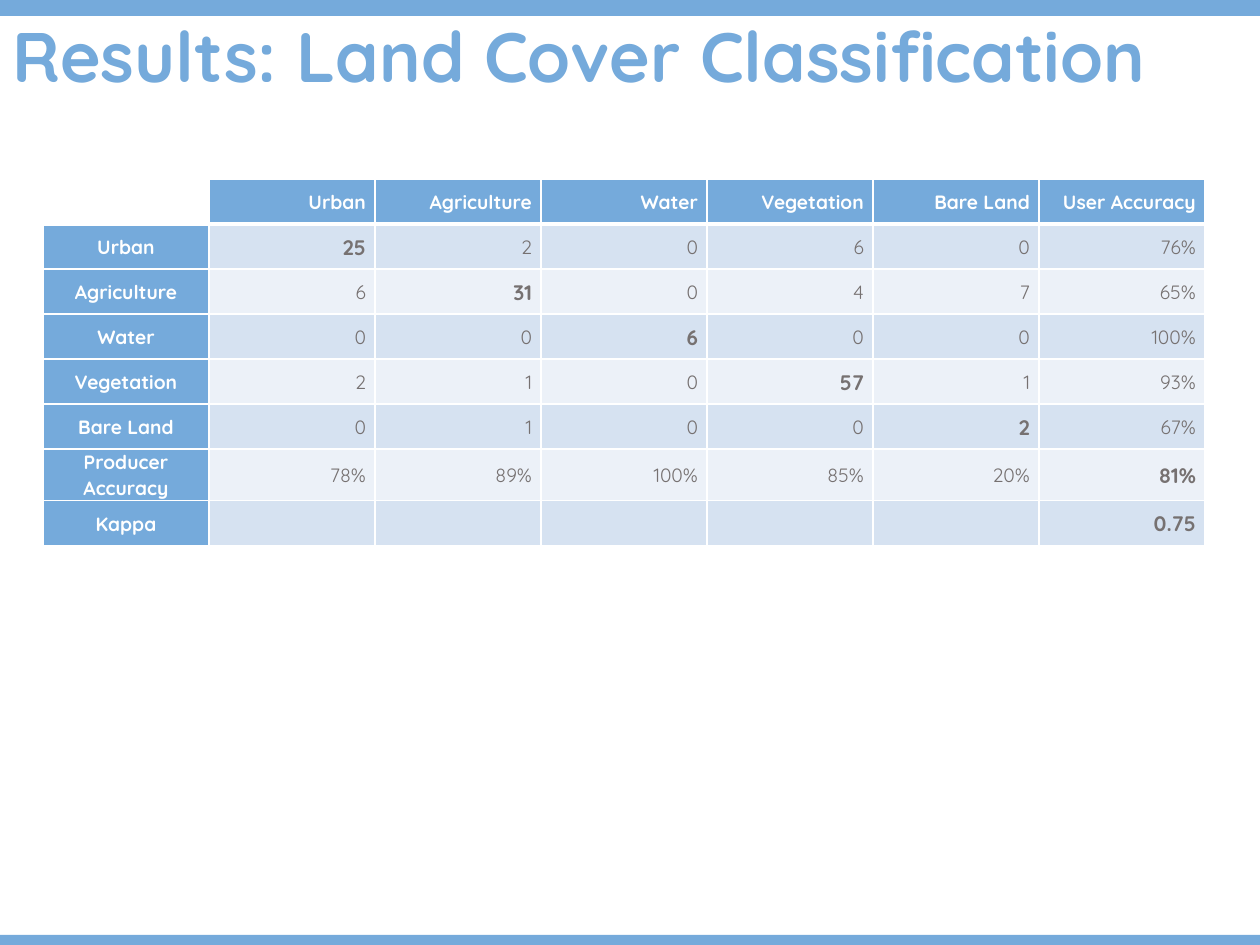
from lxml.etree import SubElement
from pptx import Presentation
from pptx.dml.color import RGBColor
from pptx.enum.shapes import MSO_SHAPE
from pptx.enum.text import MSO_ANCHOR, PP_ALIGN
from pptx.oxml.ns import qn
from pptx.util import Emu, Pt

PX_PER_INCH = 126
FONT = "Quicksand"
BLUE = RGBColor(0x75, 0xAA, 0xDB)
DARK_BAND = RGBColor(0xD6, 0xE2, 0xF1)
LIGHT_BAND = RGBColor(0xEC, 0xF1, 0xF8)
GREY = RGBColor(0x76, 0x71, 0x71)
WHITE = RGBColor(0xFF, 0xFF, 0xFF)

COLUMN_WIDTH, ROW_HEIGHT = 166, 45
ROWS = [
    ["", "Urban", "Agriculture", "Water", "Vegetation", "Bare Land", "User Accuracy"],
    ["Urban", "25", "2", "0", "6", "0", "76%"],
    ["Agriculture", "6", "31", "0", "4", "7", "65%"],
    ["Water", "0", "0", "6", "0", "0", "100%"],
    ["Vegetation", "2", "1", "0", "57", "1", "93%"],
    ["Bare Land", "0", "1", "0", "0", "2", "67%"],
    ["Producer Accuracy", "78%", "89%", "100%", "85%", "20%", "81%"],
    ["Kappa", "", "", "", "", "", "0.75"],
]
KAPPA_CELL = (7, 6)


def px(length):
    """Turn pixels into EMU."""
    return Emu(round(length * 914400 / PX_PER_INCH))


def set_font(para, size, color, bold):
    """Format the text of a paragraph."""
    font = para.font
    font.name, font.size, font.bold = FONT, Pt(size), bold
    font.color.rgb = color


def add_bar(page, top, height):
    """Draw a full-width blue bar."""
    bar = page.shapes.add_shape(MSO_SHAPE.RECTANGLE, 0, px(top), px(1260), px(height))
    bar.shadow.inherit = False
    bar.fill.solid()
    bar.fill.fore_color.rgb = BLUE
    bar.line.fill.background()


def set_title(page, text):
    """Place and format the title."""
    title = page.shapes.title
    title.left, title.top, title.width, title.height = px(0), px(6), px(1260), px(97)
    frame = title.text_frame
    frame.text = text
    frame.vertical_anchor = MSO_ANCHOR.TOP
    para = frame.paragraphs[0]
    para.alignment = PP_ALIGN.LEFT
    set_font(para, 40, BLUE, True)


def set_borders(cell, widths):
    """Give a cell white borders, with widths in points by side."""
    properties = cell._tc.get_or_add_tcPr()
    for position, (side, width) in enumerate(widths.items()):
        line = SubElement(properties, qn(f"a:ln{side}"), w=str(Pt(width)))
        fill = SubElement(line, qn("a:solidFill"))
        SubElement(fill, qn("a:srgbClr"), val=str(WHITE))
        properties.insert(position, line)


def format_cell(cell, row, column, text):
    """Fill in a cell and style it by its place in the matrix."""
    is_header = row == 0 or column == 0
    is_key = not is_header and (row == column or (row, column) == KAPPA_CELL)
    cell.margin_left = cell.margin_right = px(9)
    cell.margin_top = cell.margin_bottom = 0
    cell.vertical_anchor = MSO_ANCHOR.MIDDLE
    if row == column == 0:
        cell.fill.background()
    else:
        cell.fill.solid()
        band = DARK_BAND if row % 2 else LIGHT_BAND
        cell.fill.fore_color.rgb = BLUE if is_header else band
    top = 3 if row == 1 else 1
    bottom = 3 if row == 0 else 1
    set_borders(cell, {"L": 1, "R": 1, "T": top, "B": bottom})
    cell.text = text
    para = cell.text_frame.paragraphs[0]
    para.alignment = PP_ALIGN.RIGHT if column else PP_ALIGN.CENTER
    para.line_spacing = 1.07
    set_font(para, 12 if is_key else 11, WHITE if is_header else GREY, is_header or is_key)


def add_matrix(page, left, top):
    """Add the accuracy table."""
    row_count, column_count = len(ROWS), len(ROWS[0])
    table = page.shapes.add_table(
        row_count, column_count, px(left), px(top),
        px(column_count * COLUMN_WIDTH), px(row_count * ROW_HEIGHT),
    ).table
    table.first_row = table.horz_banding = False
    for column in table.columns:
        column.width = px(COLUMN_WIDTH)
    for row, texts in enumerate(ROWS):
        table.rows[row].height = px(ROW_HEIGHT)
        for column, text in enumerate(texts):
            format_cell(table.cell(row, column), row, column, text)


def main():
    """Build the slide and save it."""
    deck = Presentation()
    deck.slide_width, deck.slide_height = px(1260), px(945)
    page = deck.slides.add_slide(deck.slide_layouts[5])
    add_bar(page, 0, 16)
    add_bar(page, 935, 10)
    add_matrix(page, 43, 179)
    set_title(page, "Results: Land Cover Classification")
    deck.save("out.pptx")


if __name__ == "__main__":
    main()
